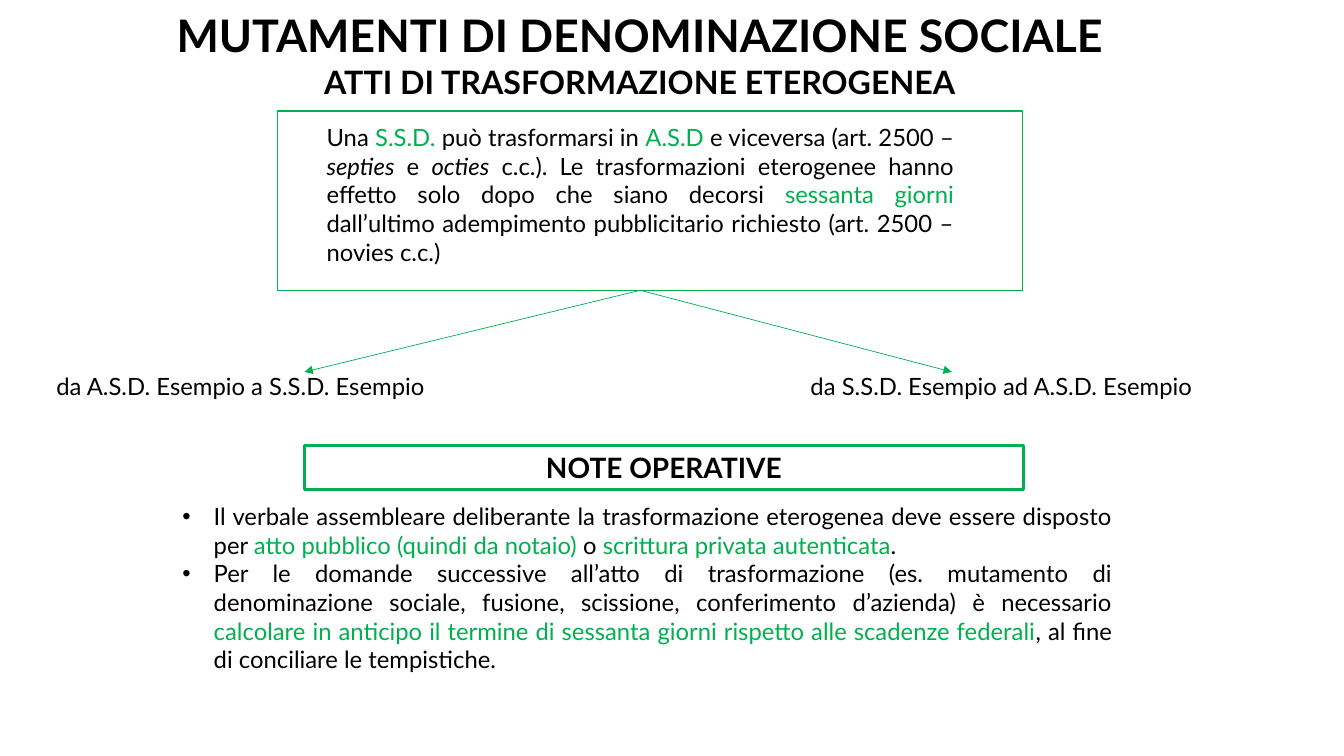
from dataclasses import dataclass
from typing import NamedTuple

from lxml import etree
from pptx import Presentation
from pptx import util as u
from pptx.dml.color import RGBColor
from pptx.enum import shapes, text
from pptx.oxml.ns import qn

EMU_PER_PX = 9144  # 100 px to the inch
FONT = "Lato"
BLACK = "000000"
GREEN = "00B050"
BODY_SIZE = 17
BULLET_INDENT = 31
CENTER = text.PP_ALIGN.CENTER
JUSTIFY = text.PP_ALIGN.JUSTIFY
TOP = text.MSO_ANCHOR.TOP
MIDDLE = text.MSO_ANCHOR.MIDDLE


class Box(NamedTuple):
    left: int
    top: int
    width: int
    height: int


class Span(NamedTuple):
    content: str
    color: str = BLACK
    italic: bool = False


class Arrow(NamedTuple):
    end_x: int
    end_y: int


class Label(NamedTuple):
    box: Box
    spans: list[Span]


@dataclass
class Line:
    """One paragraph and its look."""
    spans: list[Span]
    size: int = BODY_SIZE
    bold: bool = False
    align: text.PP_ALIGN = JUSTIFY
    bullet: bool = False


TITLE_BOX = Box(95, 3, 1080, 106)
TITLE = [
    Line([Span("MUTAMENTI DI DENOMINAZIONE SOCIALE")], 32, True, CENTER),
    Line([Span("ATTI DI TRASFORMAZIONE ETEROGENEA")], 23, True, CENTER),
]
RULE_FRAME = Box(275, 110, 739, 178)
NOTES_FRAME = Box(302, 442, 713, 44)
NOTES_HEADING = Line([Span("NOTE OPERATIVE")], 20, True, CENTER)
NOTES_BOX = Box(171, 493, 942, 180)
NOTES = [
    Line([
        Span("Il verbale assembleare deliberante la trasformazione eterogenea "
             "deve essere disposto per "),
        Span("atto pubblico (quindi da notaio) ", GREEN),
        Span("o "),
        Span("scrittura privata autenticata", GREEN),
        Span("."),
    ], bullet=True),
    Line([
        Span("Per le domande successive all’atto di trasformazione (es. mutamento "
             "di denominazione sociale, fusione, scissione, conferimento d’azienda) "
             "è necessario "),
        Span("calcolare in anticipo il termine di sessanta giorni rispetto alle "
             "scadenze federali", GREEN),
        Span(", al fine di conciliare le tempistiche."),
    ], bullet=True),
]
LABELS = [
    Label(Box(314, 117, 642, 152), [
        Span("Una "),
        Span("S.S.D. ", GREEN),
        Span("può trasformarsi in "),
        Span("A.S.D ", GREEN),
        Span("e viceversa (art. 2500 – "),
        Span("septies", italic=True),
        Span(" e "),
        Span("octies", italic=True),
        Span(" c.c.). Le trasformazioni eterogenee hanno effetto solo dopo che "
             "siano decorsi "),
        Span("sessanta giorni ", GREEN),
        Span("dall’ultimo adempimento pubblicitario richiesto (art. 2500 – "
             "novies c.c.)"),
    ]),
    Label(Box(46, 364, 539, 91), [Span("da A.S.D. Esempio a S.S.D. Esempio")]),
    Label(Box(794, 364, 539, 91), [Span("da S.S.D. Esempio ad A.S.D. Esempio")]),
]
ARROW_START = (635, 288)
ARROWS = [Arrow(302, 369), Arrow(944, 369)]


def px(length: int) -> u.Emu:
    return u.Emu(length * EMU_PER_PX)


def rgb(color: str) -> RGBColor:
    return RGBColor.from_string(color)


def add_bullet(paragraph) -> None:
    properties = paragraph._p.get_or_add_pPr()
    properties.set("marL", str(px(BULLET_INDENT)))
    properties.set("indent", str(-px(BULLET_INDENT)))
    etree.SubElement(properties, qn("a:buFont")).set("typeface", "Arial")
    etree.SubElement(properties, qn("a:buChar")).set("char", "•")


def write(shape, lines: list[Line], anchor: text.MSO_ANCHOR = TOP) -> None:
    frame = shape.text_frame
    frame.word_wrap = True
    frame.auto_size = text.MSO_AUTO_SIZE.NONE
    frame.vertical_anchor = anchor
    for index, line in enumerate(lines):
        paragraph = frame.add_paragraph() if index else frame.paragraphs[0]
        if line.bullet:
            add_bullet(paragraph)
        paragraph.alignment = line.align
        paragraph.space_before = u.Pt(0)
        for span in line.spans:
            run = paragraph.add_run()
            run.text = span.content
            run.font.name = FONT
            run.font.size = u.Pt(line.size)
            run.font.bold = line.bold
            run.font.italic = span.italic
            run.font.color.rgb = rgb(span.color)


def place(shape, box: Box) -> None:
    shape.left, shape.top, shape.width, shape.height = map(px, box)


def add_frame(slide, box: Box, weight: float):
    """Add an unfilled green rectangle."""
    shape = slide.shapes.add_shape(shapes.MSO_SHAPE.RECTANGLE, *map(px, box))
    shape.shadow.inherit = False
    shape.fill.background()
    shape.line.color.rgb = rgb(GREEN)
    shape.line.width = u.Pt(weight)
    return shape


def add_arrow(slide, arrow: Arrow) -> None:
    connector = slide.shapes.add_connector(
        shapes.MSO_CONNECTOR.STRAIGHT, *map(px, ARROW_START + tuple(arrow)))
    connector.line.color.rgb = rgb(GREEN)
    connector.line.width = u.Pt(0.5)
    outline = connector.line._get_or_add_ln()
    etree.SubElement(outline, qn("a:tailEnd")).set("type", "triangle")
    etree.SubElement(connector._element.spPr, qn("a:effectLst"))


def main() -> None:
    presentation = Presentation()
    presentation.slide_width = px(1333)
    presentation.slide_height = px(750)
    slide = presentation.slides.add_slide(presentation.slide_layouts[1])

    title, notes = slide.shapes.title, slide.placeholders[1]
    place(title, TITLE_BOX)
    write(title, TITLE)
    place(notes, NOTES_BOX)
    write(notes, NOTES)

    add_frame(slide, RULE_FRAME, 1)
    write(add_frame(slide, NOTES_FRAME, 2.25), [NOTES_HEADING], MIDDLE)
    for label in LABELS:
        write(slide.shapes.add_textbox(*map(px, label.box)), [Line(label.spans)])
    for arrow in ARROWS:
        add_arrow(slide, arrow)

    presentation.save("out.pptx")


if __name__ == "__main__":
    main()
